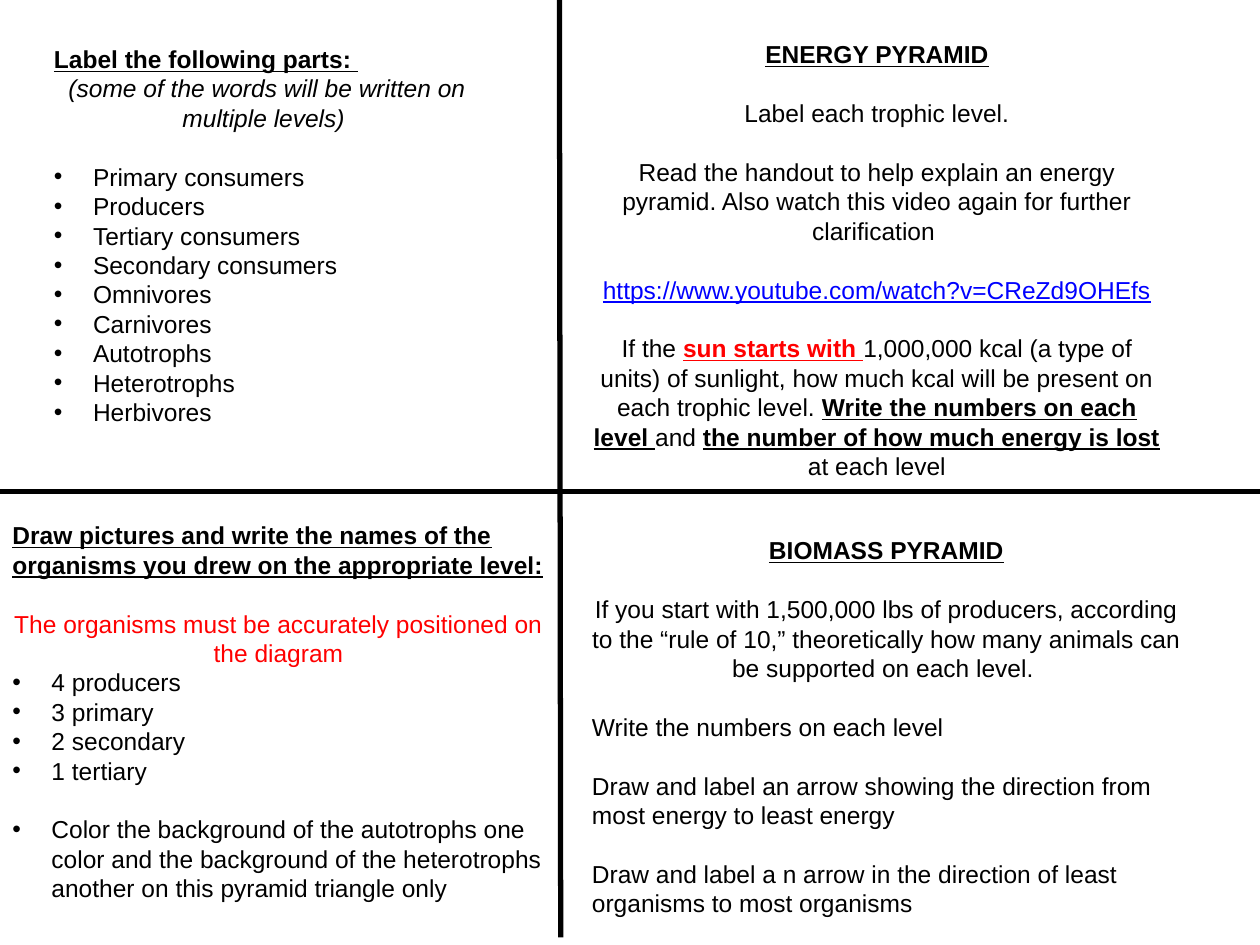
from lxml.etree import SubElement
from pptx import Presentation
from pptx.dml.color import RGBColor
from pptx.enum.shapes import MSO_CONNECTOR as Connector
from pptx.enum.text import MSO_AUTO_SIZE as AutoSize, PP_ALIGN as Align
from pptx.oxml.ns import qn
from pptx.util import Inches, Pt

deck = Presentation()
deck.slide_width, deck.slide_height = Inches(10), Inches(7.5)
page = deck.slides.add_slide(deck.slide_layouts[6])
WIDTH, HEIGHT = deck.slide_width, deck.slide_height
GAP = Pt(16.8)  # one line of text
INDENT = Inches(0.31)

# Run styles: colour, bold, underline, italic
STYLES = {
    "plain": ("000000", False, False, False),
    "heading": ("000000", True, True, False),
    "aside": ("000000", False, False, True),
    "warning": ("FF0000", False, False, False),
    "alert": ("FF0000", True, True, False),
    "link": ("0000FF", False, True, False),
}


def color(value):
    return RGBColor.from_string(value)


def bullet(paragraph):
    properties = paragraph._p.get_or_add_pPr()
    properties.set("marL", str(INDENT))
    properties.set("indent", str(-INDENT))
    SubElement(properties, qn("a:buFont"), typeface="Arial")
    SubElement(properties, qn("a:buChar"), char="•")


# Each paragraph: layout, line left open above it, then its (text, style) runs
label_words = ["Primary consumers", "Producers", "Tertiary consumers",
               "Secondary consumers", "Omnivores", "Carnivores", "Autotrophs",
               "Heterotrophs", "Herbivores"]
labels = [
    ("left", False, [("Label the following parts: ", "heading")]),
    ("center", False, [("(some of the words will be written on multiple levels) ", "aside")]),
] + [("bullet", i == 0, [(word, "plain")]) for i, word in enumerate(label_words)]

organisms = ["4 producers", "3 primary", "2 secondary", "1 tertiary"]
drawings = [
    ("left", False, [("Draw pictures and write the names of the organisms you drew "
                      "on the appropriate level:", "heading")]),
    ("center", True, [("The organisms must be accurately positioned on the diagram", "warning")]),
] + [("bullet", False, [(organism, "plain")]) for organism in organisms] + [
    ("bullet", True, [("Color the background of the autotrophs one color and the background "
                       "of the heterotrophs another on this pyramid triangle only", "plain")]),
]

energy = [
    ("center", False, [("ENERGY PYRAMID", "heading")]),
    ("center", True, [("Label each trophic level.", "plain")]),
    ("center", True, [("Read the handout to help explain an energy pyramid. Also watch this "
                       "video again for further clarification ", "plain")]),
    ("center", True, [("https://www.youtube.com/watch?v=CReZd9OHEfs", "link")]),
    ("center", True, [
        ("If the ", "plain"),
        ("sun starts with ", "alert"),
        ("1,000,000 kcal (a type of units) of sunlight, how much kcal will be present on "
         "each trophic level. ", "plain"),
        ("Write the numbers on each level ", "heading"),
        ("and ", "plain"),
        ("the number of how much energy is lost", "heading"),
        (" at each level", "plain"),
    ]),
]

biomass = [
    ("center", False, [("BIOMASS PYRAMID", "heading")]),
    ("center", True, [("If you start with 1,500,000 lbs of producers, according to the “rule of "
                       "10,” theoretically how many animals can be supported on each level. ",
                       "plain")]),
    ("left", True, [("Write the numbers on each level", "plain")]),
    ("left", True, [("Draw and label an arrow showing the direction from most energy to "
                     "least energy", "plain")]),
    ("left", True, [("Draw and label a n arrow in the direction of least organisms to most "
                     "organisms", "plain")]),
]

# Four quadrants: left and width as shares of the slide width, top and height of its height
quadrants = [
    (0.033, 0.04, 0.358, 0.42, labels),
    (0, 0.544, 0.442, 0.42, drawings),
    (0.46, 0.035, 0.472, 0.485, energy),
    (0.46, 0.56, 0.487, 0.42, biomass),
]
for left, top, width, height, paragraphs in quadrants:
    box = page.shapes.add_textbox(int(left * WIDTH), int(top * HEIGHT),
                                  int(width * WIDTH), int(height * HEIGHT))
    frame = box.text_frame
    frame.word_wrap = True
    frame.auto_size = AutoSize.SHAPE_TO_FIT_TEXT
    for number, (layout, open_line, runs) in enumerate(paragraphs):
        para = frame.add_paragraph() if number else frame.paragraphs[0]
        para.alignment = Align.CENTER if layout == "center" else Align.LEFT
        para.line_spacing = Pt(16.8)
        if open_line:
            para.space_before = GAP
        if layout == "bullet":
            bullet(para)
        para.font.size, para.font.name = Pt(14), "Arial"
        for text, style in runs:
            span = para.add_run()
            span.text = text
            tint, span.font.bold, span.font.underline, span.font.italic = STYLES[style]
            span.font.color.rgb = color(tint)

# Dividing lines between the quadrants
for x1, y1, x2, y2 in [(0.444, 0, 0.445, 0.992), (0, 0.52, 1, 0.52)]:
    divider = page.shapes.add_connector(Connector.STRAIGHT, int(x1 * WIDTH), int(y1 * HEIGHT),
                                        int(x2 * WIDTH), int(y2 * HEIGHT))
    divider.line.color.rgb = color("000000")
    divider.line.width = Pt(3)
    SubElement(divider._element.spPr, qn("a:effectLst"))

deck.save("out.pptx")
